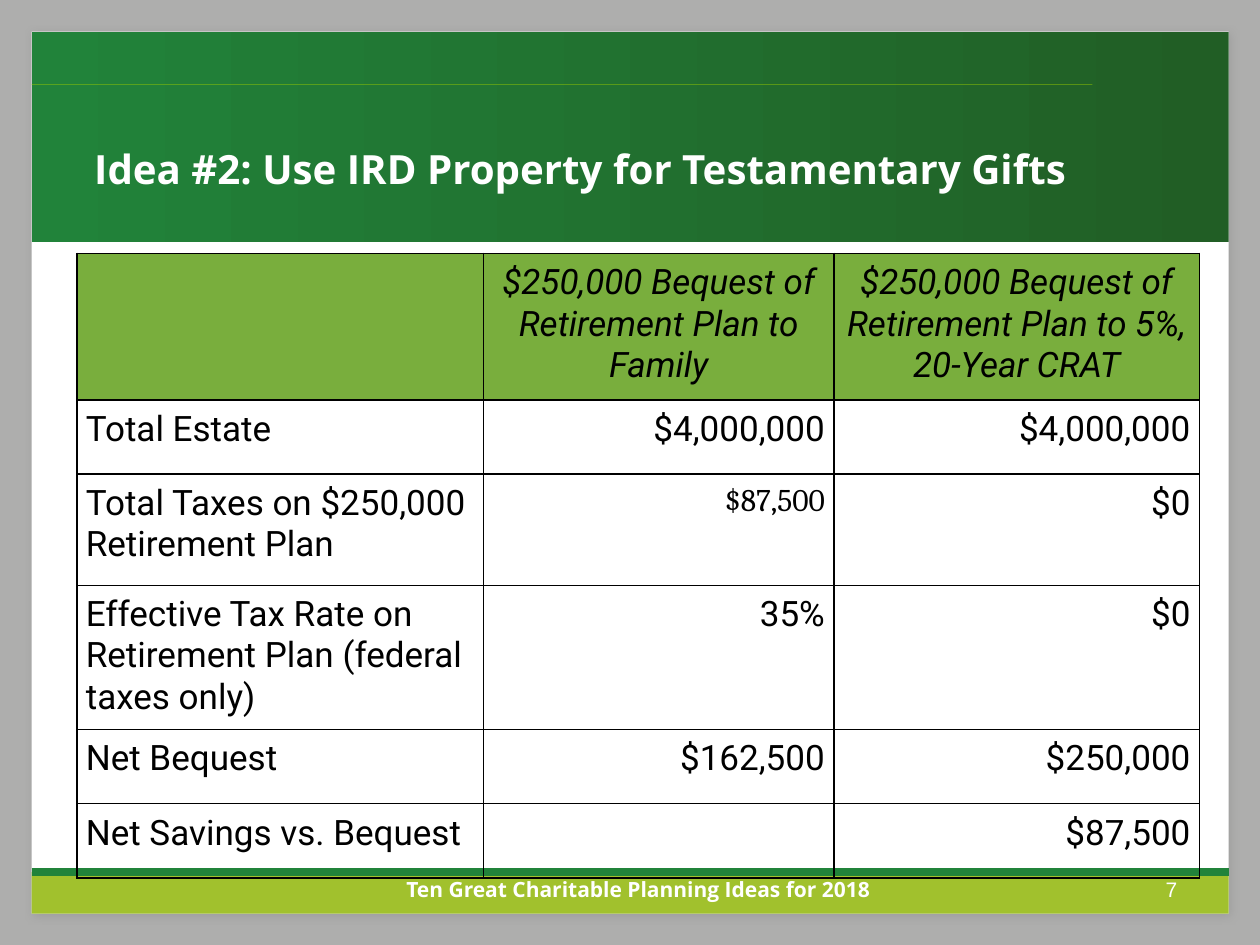
"""Build the slide on using IRD property for testamentary gifts."""
from lxml import etree
from pptx import Presentation
from pptx.dml.color import RGBColor
from pptx.enum.shapes import MSO_CONNECTOR, MSO_SHAPE
from pptx.enum.text import MSO_ANCHOR, PP_ALIGN
from pptx.oxml import parse_xml
from pptx.oxml.ns import nsdecls, qn
from pptx.util import Cm, Pt

RECT = MSO_SHAPE.RECTANGLE
LINE = MSO_CONNECTOR.STRAIGHT
LEFT, MID, RIGHT = PP_ALIGN.LEFT, PP_ALIGN.CENTER, PP_ALIGN.RIGHT
TOP, HALF = MSO_ANCHOR.TOP, MSO_ANCHOR.MIDDLE
SIDES = ("margin_left", "margin_top", "margin_right", "margin_bottom")
EDGE, WIDE = 0.64, 24.13


def paint(code):
    """Turn a hex string into a colour."""
    return RGBColor.from_string(code)


def put(para, text, side, color, **form):
    """Write one styled run into a paragraph."""
    para.alignment = side
    run = para.add_run()
    run.text = text
    run.font.color.rgb = paint(color)
    for key, value in form.items():
        setattr(run.font, key, value)


deck = Presentation()
deck.slide_width, deck.slide_height = Cm(25.4), Cm(19.05)
slide = deck.slides.add_slide(deck.slide_layouts[6])
shapes = slide.shapes

panes = {
    "AEAEAD": (0, 0, 25.4, 19.05),
    "FFFFFF": (EDGE, EDGE, WIDE, 17.78),
    "A1C12D": (EDGE, 17.58, WIDE, 0.84),
    "21833A": (EDGE, EDGE, WIDE, 4.24),
}
drawn = {}
for color, box in panes.items():
    pane = shapes.add_shape(RECT, *map(Cm, box))
    pane.shadow.inherit = False
    pane.line.fill.background()
    pane.fill.solid()
    pane.fill.fore_color.rgb = paint(color)
    drawn[color] = pane

page = drawn["FFFFFF"]
glow = page._element.spPr.find(qn("a:effectLst"))
glow.append(parse_xml(
    f'<a:outerShdw {nsdecls("a")} blurRad="63500" dist="25400" dir="2700000">'
    '<a:srgbClr val="808080"><a:alpha val="37000"/></a:srgbClr></a:outerShdw>'))

head = drawn["21833A"].fill
head.gradient()
head.gradient_angle = 180
for stop, color in zip(head.gradient_stops, ("215E25", "21833A")):
    stop.color.rgb = paint(color)

rules = [
    (22.02, 1.7, "99CC00", 0.25, 71),
    (EDGE + WIDE, 17.58, "21833A", 4.5, 100),
]
for end, y, color, width, clear in rules:
    rule = shapes.add_connector(LINE, Cm(EDGE), Cm(y), Cm(end), Cm(y))
    rule.line.color.rgb = paint(color)
    rule.line.width = Pt(width)
    etree.SubElement(rule._element.spPr, qn("a:effectLst"))
    tint = rule._element.spPr.find(".//" + qn("a:srgbClr"))
    etree.SubElement(tint, qn("a:alpha"), val=str(clear * 1000))

notes = [
    ("Idea #2: Use IRD Property for Testamentary Gifts",
     (1.9, 2.34, 21.59, 2.11), LEFT, HALF, 23, "Open Sans", True),
    ("7", (23.5, 17.68, 1.07, 0.48), LEFT, TOP, 12, "Arial", False),
    ("Ten Great Charitable Planning Ideas for 2018",
     (6.1, 17.68, 13.54, 0.53), MID, TOP, 12, "Open Sans", True),
]
for text, box, side, anchor, size, face, bold in notes:
    frame = shapes.add_textbox(*map(Cm, box)).text_frame
    form = dict.fromkeys(SIDES, 0)
    form.update(word_wrap=True, vertical_anchor=anchor)
    for key, value in form.items():
        setattr(frame, key, value)
    put(frame.paragraphs[0], text, side, "FFFFFF",
        size=Pt(size), name=face, bold=bold)

wides = [8.2, 7.06, 7.37]
talls = [2.95, 1.5, 2.24, 2.64, 1.5, 1.5]
rows = [
    ("", "$250,000 Bequest of Retirement Plan to Family",
     "$250,000 Bequest of Retirement Plan to 5%, 20-Year CRAT"),
    ("Total Estate", "$4,000,000", "$4,000,000"),
    ("Total Taxes on $250,000 Retirement Plan", "$87,500", "$0"),
    ("Effective Tax Rate on Retirement Plan (federal taxes only)", "35%", "$0"),
    ("Net Bequest", "$162,500", "$250,000"),
    ("Net Savings vs. Bequest", "", "$87,500"),
]
table = shapes.add_table(len(rows), len(wides), Cm(1.55), Cm(5.11),
                         Cm(sum(wides)), Cm(sum(talls))).table
table.first_row = table.horz_banding = False
for col, wide in zip(table.columns, wides):
    col.width = Cm(wide)
for row, tall in zip(table.rows, talls):
    row.height = Cm(tall)

for r, row in enumerate(rows):
    for c, text in enumerate(row):
        cell = table.cell(r, c)
        for side in SIDES:
            setattr(cell, side, Cm(0.18))
        props = cell._tc.get_or_add_tcPr()
        for edge in ("lnL", "lnR", "lnT", "lnB"):
            props.append(parse_xml(
                f'<a:{edge} {nsdecls("a")} w="12700"><a:solidFill>'
                f'<a:srgbClr val="000000"/></a:solidFill></a:{edge}>'))
        if r == 0:
            cell.fill.solid()
            cell.fill.fore_color.rgb = paint("79AE3D")
        else:
            cell.fill.background()
        if text:
            size, face = (18, "Cambria") if (r, c) == (2, 1) else (20, "Roboto")
            side = MID if r == 0 else RIGHT if c else LEFT
            put(cell.text_frame.paragraphs[0], text, side, "000000",
                size=Pt(size), name=face, italic=r == 0)

deck.save("out.pptx")
